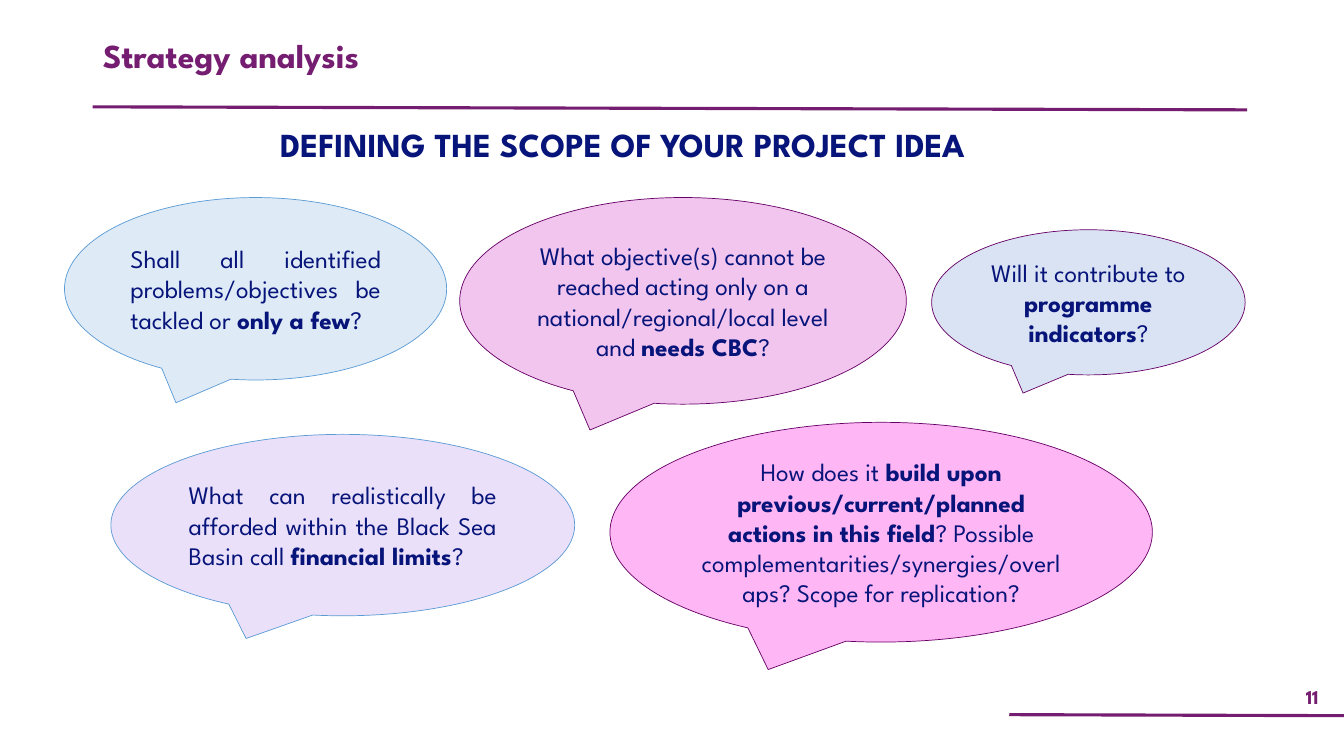
from lxml.etree import SubElement
from pptx import Presentation
from pptx.dml.color import RGBColor
from pptx.enum.shapes import MSO_CONNECTOR, MSO_SHAPE
from pptx.enum.text import MSO_ANCHOR, MSO_AUTO_SIZE, PP_ALIGN
from pptx.oxml.ns import qn
from pptx.util import Inches, Pt

FONT = "League Spartan"
PLUM = RGBColor(0x75, 0x1D, 0x70)
NAVY = RGBColor(0x07, 0x14, 0x7A)
BLUE = RGBColor(0x5B, 0x9B, 0xD5)
WINE = RGBColor(0x66, 0x00, 0x66)
SKY = RGBColor(0xDE, 0xEB, 0xF7)
ROSE = RGBColor(0xF1, 0xC5, 0xEE)
LILAC = RGBColor(0xEB, 0xE0, 0xF9)
ICE = RGBColor(0xDA, 0xE3, 0xF3)
PINK = RGBColor(0xFF, 0xB6, 0xF4)

BUBBLES = [
    ((0.64, 1.96, 3.79, 1.81), SKY, BLUE, PP_ALIGN.JUSTIFY,
     ("Shall all identified problems/objectives be tackled or ",
      "only a few", "?")),
    ((4.56, 1.96, 4.43, 2.05), ROSE, WINE, PP_ALIGN.CENTER,
     ("What objective(s) cannot be reached acting only on a "
      "national/regional/local level and ", "needs CBC", "?")),
    ((1.1, 4.31, 4.6, 1.8), LILAC, BLUE, PP_ALIGN.JUSTIFY,
     ("What can realistically be afforded within the Black Sea Basin call ",
      "financial limits", "?")),
    ((9.24, 2.28, 3.11, 1.44), ICE, WINE, PP_ALIGN.CENTER,
     ("Will it contribute to ", "programme indicators", "?")),
    ((6.05, 4.19, 5.38, 2.18), PINK, WINE, PP_ALIGN.CENTER,
     ("How does it ",
      "build upon previous/current/planned actions in this field",
      "? Possible complementarities/synergies/overlaps? "
      "Scope for replication?")),
]


def add_run(para, text, size, color, bold):
    run = para.add_run()
    run.text = text
    run.font.name = FONT
    run.font.size = Pt(size)
    run.font.bold = bold
    run.font.color.rgb = color


def set_frame(frame, anchor, align):
    frame.word_wrap = True
    frame.auto_size = MSO_AUTO_SIZE.NONE
    frame.vertical_anchor = anchor
    para = frame.paragraphs[0]
    para.alignment = align
    return para


def fill_holder(holder, box, text, color, align):
    holder.left, holder.top, holder.width, holder.height = map(Inches, box)
    para = set_frame(holder.text_frame, MSO_ANCHOR.TOP, align)
    props = para._p.get_or_add_pPr()
    props.set("marL", "0")
    props.set("indent", "0")
    SubElement(props, qn("a:buNone"))
    para.line_spacing = 0.9
    para.space_before = Pt(0)
    add_run(para, text, 24, color, True)


def add_rule(slide, *ends):
    rule = slide.shapes.add_connector(
        MSO_CONNECTOR.STRAIGHT, *map(Inches, ends))
    rule.line.color.rgb = PLUM
    rule.line.width = Pt(2.25)
    SubElement(rule._element.spPr, qn("a:effectLst"))


def add_number(slide, text):
    box = slide.shapes.add_textbox(
        Inches(12.7), Inches(6.73), Inches(0.63), Inches(0.36))
    para = set_frame(box.text_frame, MSO_ANCHOR.MIDDLE, PP_ALIGN.CENTER)
    add_run(para, text, 14, PLUM, True)


def add_bubble(slide, box, fill, edge, align, parts):
    shape = slide.shapes.add_shape(
        MSO_SHAPE.OVAL_CALLOUT, *map(Inches, box))
    shape.shadow.inherit = False
    shape.fill.solid()
    shape.fill.fore_color.rgb = fill
    shape.line.color.rgb = edge
    shape.line.width = Pt(0.5)
    para = set_frame(shape.text_frame, MSO_ANCHOR.MIDDLE, align)
    for index, part in enumerate(parts):
        add_run(para, part, 18, NAVY, index == 1)


def main():
    deck = Presentation()
    deck.slide_width = Inches(13.33)
    deck.slide_height = Inches(7.5)
    slide = deck.slides.add_slide(deck.slide_layouts[1])
    fill_holder(slide.shapes.title, (0.92, 0.34, 9.73, 0.65),
                "Strategy analysis", PLUM, PP_ALIGN.LEFT)
    fill_holder(slide.placeholders[1], (0.92, 1.22, 10.51, 5.2),
                "DEFINING THE SCOPE OF YOUR PROJECT IDEA", NAVY,
                PP_ALIGN.CENTER)
    add_rule(slide, 0.92, 1.06, 12.37, 1.09)
    add_rule(slide, 10.01, 7.09, 13.33, 7.1)
    add_number(slide, "11")
    for bubble in BUBBLES:
        add_bubble(slide, *bubble)
    deck.save("out.pptx")


if __name__ == "__main__":
    main()
